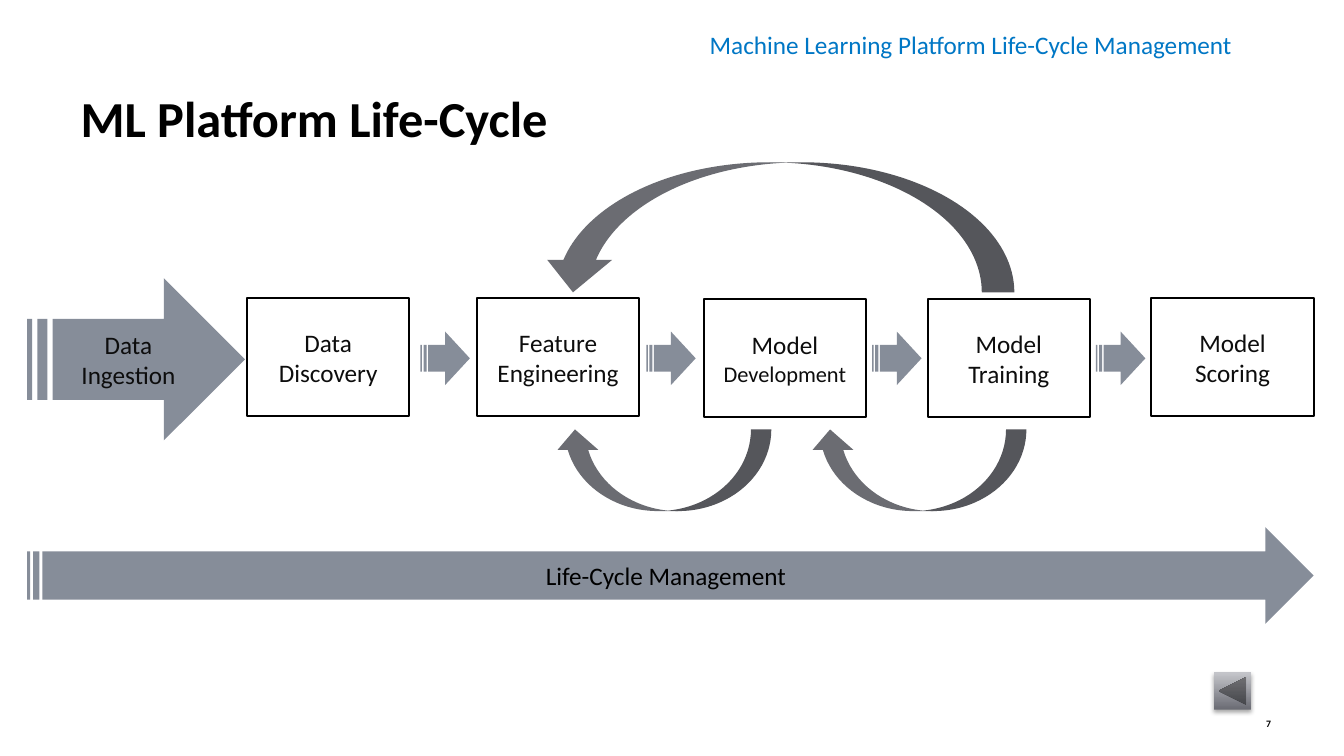
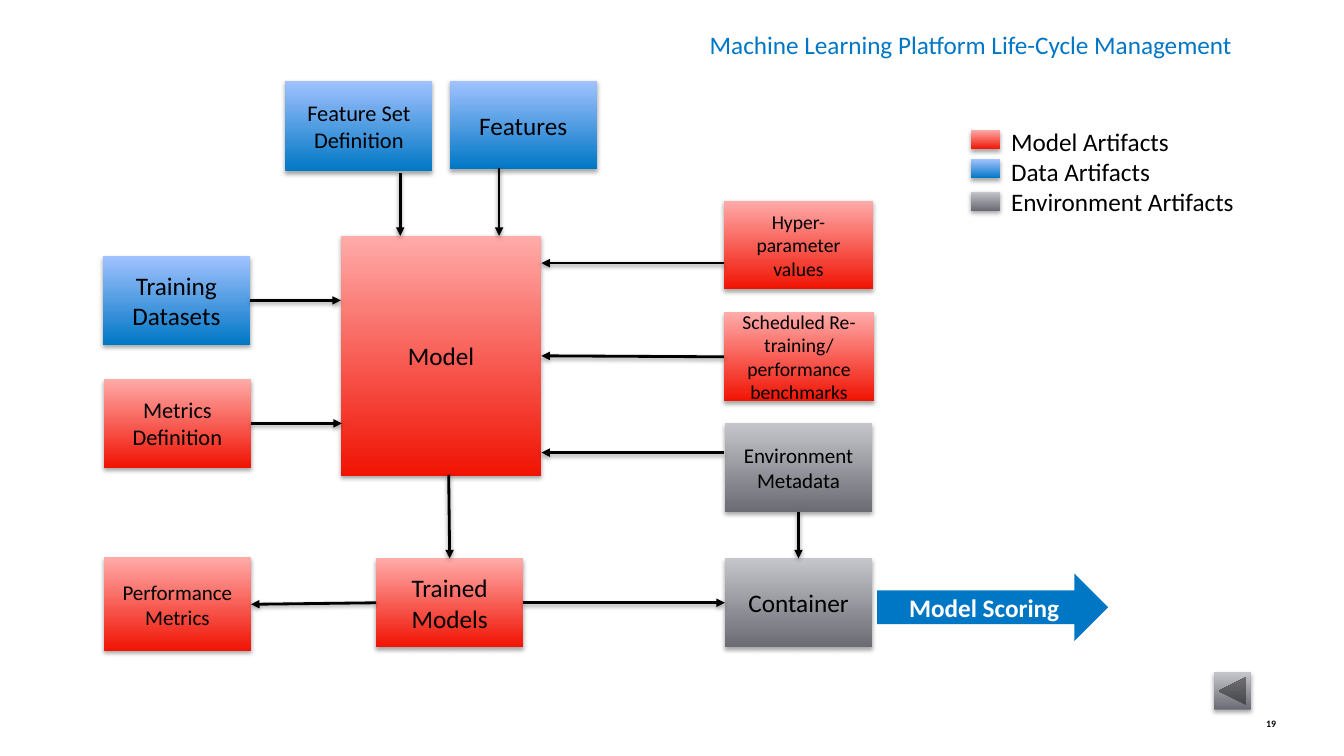
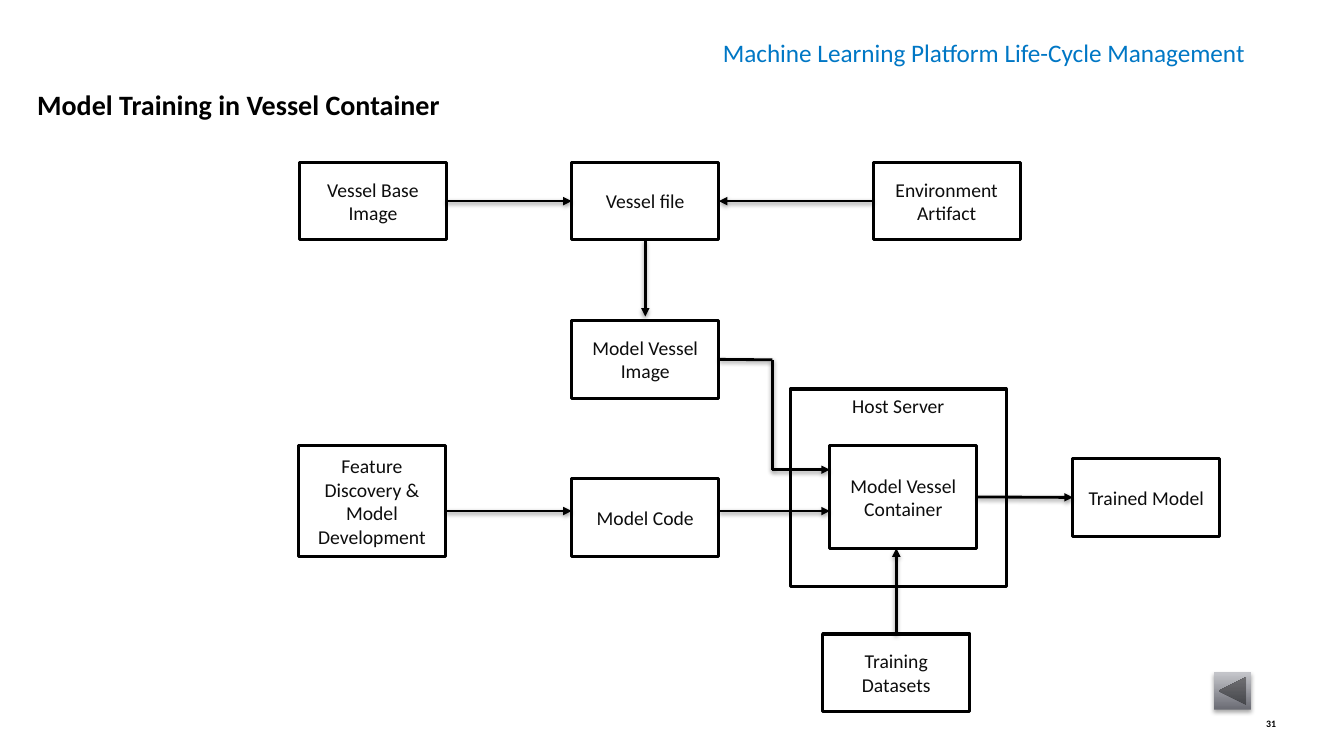
from dataclasses import dataclass
from typing import Union

import lxml.etree
import pptx
import pptx.dml.color
import pptx.enum.shapes
import pptx.enum.text
import pptx.oxml
import pptx.oxml.ns
import pptx.util

Inches = pptx.util.Inches
Pt = pptx.util.Pt
Kind = pptx.enum.shapes.MSO_SHAPE
Align = pptx.enum.text.PP_ALIGN
Anchor = pptx.enum.text.MSO_ANCHOR
Shape = pptx.shapes.autoshape.Shape
Slide = pptx.slide.Slide
Fill = Union[str, tuple[str, str], None]
Runs = list[tuple[str, float]]
Point = tuple[float, float]
Joint = tuple[str, int]

FONT = "Calibri"
BLACK, INK, WHITE = "000000", "0D0D0D", "FFFFFF"
BRAND, STEEL, SLATE = "0077C5", "868D99", "6B6C72"
RED, BLUE, GREY = ("F01303", "FFABA9"), (BRAND, "A2C2FF"), ("6A6B73", "C5C6CB")
TOP, LEFT, BOTTOM, RIGHT = range(4)


@dataclass
class Box:
    x: float
    y: float
    w: float
    h: float
    text: Union[str, Runs] = ""
    size: float = 18
    fill: Fill = None
    kind: int = Kind.RECTANGLE
    ink: str = BLACK
    edge: float = 0
    turn: float = 0
    bold: bool = False
    anchor: int = Anchor.MIDDLE


@dataclass
class Link:
    start: Union[Point, Joint]
    end: Union[Point, Joint]
    head: bool = True


def tint(code: str) -> pptx.dml.color.RGBColor:
    return pptx.dml.color.RGBColor.from_string(code)


def cast(part: lxml.etree._Element, alpha: int, drop: int) -> None:
    space = pptx.oxml.ns.nsdecls("a")
    part.append(pptx.oxml.parse_xml(
        f'<a:outerShdw {space} blurRad="40000" dist="{drop}" dir="5400000" rotWithShape="0">'
        f'<a:srgbClr val="{BLACK}"><a:alpha val="{alpha}000"/></a:srgbClr></a:outerShdw>'))


def paint(shape: Shape, fill: Fill) -> None:
    shape.shadow.inherit = False
    if fill is None:
        shape.fill.background()
    elif isinstance(fill, str):
        shape.fill.solid()
        shape.fill.fore_color.rgb = tint(fill)
    else:
        shape.fill.gradient()
        shape.fill.gradient_angle = 90
        for stop, code in zip(shape.fill.gradient_stops, fill):
            stop.color.rgb = tint(code)
        cast(shape._element.spPr.find(pptx.oxml.ns.qn("a:effectLst")), 35, 23000)


def add_run(para, text: str, size: float, ink: str, bold: bool) -> None:
    run = para.add_run()
    run.text = text
    run.font.name = FONT
    run.font.size = Pt(size)
    run.font.bold = bold
    run.font.color.rgb = tint(ink)


def draw(slide: Slide, box: Box) -> Shape:
    shape = slide.shapes.add_shape(
        box.kind, Inches(box.x), Inches(box.y), Inches(box.w), Inches(box.h))
    shape.rotation = box.turn
    paint(shape, box.fill)
    if box.edge:
        shape.line.color.rgb = tint(BLACK)
        shape.line.width = Pt(box.edge)
    else:
        shape.line.fill.background()
    if box.text:
        frame = shape.text_frame
        frame.word_wrap = True
        frame.vertical_anchor = box.anchor
        para = frame.paragraphs[0]
        para.alignment = Align.CENTER
        runs = [(box.text, box.size)] if isinstance(box.text, str) else box.text
        for text, size in runs:
            add_run(para, text, size, box.ink, box.bold)
    return shape


def write(slide: Slide, x: float, y: float, w: float, h: float, lines: list[str], size: float,
          ink: str = BLACK, bold: bool = False, wrap: bool = True,
          anchor: int = Anchor.TOP) -> None:
    frame = slide.shapes.add_textbox(Inches(x), Inches(y), Inches(w), Inches(h)).text_frame
    frame.word_wrap = wrap
    frame.vertical_anchor = anchor
    if not wrap:
        frame.auto_size = pptx.enum.text.MSO_AUTO_SIZE.SHAPE_TO_FIT_TEXT
    for i, text in enumerate(lines):
        para = frame.add_paragraph() if i else frame.paragraphs[0]
        add_run(para, text, size, ink, bold)


def locate(end: Union[Point, Joint], nodes: dict[str, Shape]) -> tuple[int, int]:
    if not isinstance(end[0], str):
        return Inches(end[0]), Inches(end[1])
    node = nodes[end[0]]
    mid_x, mid_y = node.left + node.width // 2, node.top + node.height // 2
    return [(mid_x, node.top), (node.left, mid_y),
            (mid_x, node.top + node.height), (node.left + node.width, mid_y)][end[1]]


def join(slide: Slide, link: Link, nodes: dict[str, Shape]) -> None:
    line = slide.shapes.add_connector(
        pptx.enum.shapes.MSO_CONNECTOR.STRAIGHT,
        *locate(link.start, nodes), *locate(link.end, nodes))
    if isinstance(link.start[0], str):
        line.begin_connect(nodes[link.start[0]], link.start[1])
    if isinstance(link.end[0], str):
        line.end_connect(nodes[link.end[0]], link.end[1])
    line.line.color.rgb = tint(BLACK)
    line.line.width = Pt(2)
    qn = pptx.oxml.ns.qn
    if link.head:
        lxml.etree.SubElement(line.line._get_or_add_ln(), qn("a:tailEnd"), type="triangle")
    cast(lxml.etree.SubElement(line._element.spPr, qn("a:effectLst")), 38, 20000)


def chart_out(slide: Slide, boxes: dict[str, Box], links: list[Link]) -> None:
    nodes = {name: draw(slide, box) for name, box in boxes.items()}
    for link in links:
        join(slide, link, nodes)


def start(deck, number: int, x: float = 6.94, y: float = 0.24) -> Slide:
    slide = deck.slides.add_slide(deck.slide_layouts[6])
    write(slide, 12.46, 7.08, 0.39, 0.2, [str(number)], 7, bold=True, anchor=Anchor.MIDDLE)
    write(slide, x, y, 6.09, 0.4, ["Machine Learning Platform Life-Cycle Management"], 18,
          BRAND, wrap=False)
    draw(slide, Box(12.04, 6.67, 0.37, 0.37, fill=GREY,
                    kind=Kind.ACTION_BUTTON_BACK_OR_PREVIOUS))
    return slide


def cycle(deck) -> None:
    slide = start(deck, 7)
    write(slide, 0.7, 0.82, 12.15, 1.53, ["ML Platform Life-Cycle"], 36, bold=True)
    steps = [
        (2.45, 2.96, "Data Discovery"),
        (4.73, 2.96, "Feature Engineering"),
        (6.98, 2.97, [("Model ", 18), ("Development", 16)]),
        (9.2, 2.97, "Model Training"),
        (11.42, 2.96, "Model Scoring"),
    ]
    for x, y, text in steps:
        draw(slide, Box(x, y, 1.61, 1.17, text, ink=INK, edge=1.5))
    stripe = Kind.STRIPED_RIGHT_ARROW
    draw(slide, Box(0.27, 2.76, 2.16, 1.61, "Data Ingestion", fill=STEEL, kind=stripe, ink=INK))
    for x in (4.17, 6.41, 8.65, 10.87):
        draw(slide, Box(x, 3.29, 0.49, 0.53, fill=STEEL, kind=stripe))
    for x in (5.5, 8.03):
        draw(slide, Box(x, 4.26, 2.15, 0.81, fill=SLATE, kind=Kind.CURVED_DOWN_ARROW, turn=180))
    draw(slide, Box(5.36, 1.61, 4.7, 1.29, fill=SLATE, kind=Kind.CURVED_UP_ARROW, turn=180))
    draw(slide, Box(0.27, 5.23, 12.76, 0.96, "Life-Cycle Management", fill=STEEL, kind=stripe))


def model(deck) -> None:
    slide = start(deck, 19)
    wide, high = 1.46, 0.88
    boxes = {
        "meta": Box(7.19, 4.2, wide, high, "Environment Metadata", 15, GREY),
        "crate": Box(7.19, 5.54, wide, high, "Container", 18, GREY),
        "trained": Box(3.73, 5.54, wide, high, "Trained Models", 18, RED),
        "model": Box(3.38, 2.34, 1.99, 2.38, "Model", 18, RED),
        "traits": Box(4.46, 0.8, wide, high, "Features", 18, BLUE),
        "bench": Box(7.18, 3.1, 1.49, high,
                     "Scheduled Re-training/ performance benchmarks", 14, RED),
        "hyper": Box(7.18, 1.99, 1.48, high, "Hyper-parameter values", 14, RED),
        "metrics": Box(1.03, 3.76, wide, high, "Metrics Definition", 16, RED),
        "scores": Box(1.03, 5.53, wide, 0.93, "Performance Metrics", 15, RED),
        "set": Box(2.83, 0.8, wide, 0.9, "Feature Set Definition", 16, BLUE),
        "data": Box(1.02, 2.54, wide, high, "Training Datasets", 18, BLUE),
    }
    links = [
        Link((4.95, 1.67), (4.95, 2.34)),
        Link((3.97, 1.72), (3.97, 2.34)),
        Link(("trained", RIGHT), ("crate", LEFT)),
        Link(("meta", BOTTOM), ("crate", TOP)),
        Link((7.18, 4.49), (5.37, 4.49)),
        Link(("data", RIGHT), (3.38, 2.98)),
        Link(("metrics", RIGHT), (3.39, 4.2)),
        Link((4.45, 4.71), ("trained", TOP)),
        Link(("trained", LEFT), ("scores", RIGHT)),
        Link(("bench", LEFT), ("model", RIGHT)),
        Link((7.18, 2.61), (5.37, 2.61)),
    ]
    chart_out(slide, boxes, links)
    write(slide, 9.93, 1.2, 2.67, 1.01,
          ["Model Artifacts", "Data Artifacts", "Environment Artifacts"], 18, wrap=False)
    for y, fill in ((1.29, RED), (1.58, BLUE), (1.9, GREY)):
        draw(slide, Box(9.63, y, 0.29, 0.19, fill=fill))
    draw(slide, Box(8.7, 5.69, 2.29, 0.67, "Model Scoring", fill=BRAND,
                    kind=Kind.RIGHT_ARROW, ink=WHITE, bold=True))


def train(deck) -> None:
    slide = start(deck, 31, 7.07, 0.32)
    write(slide, 0.27, 0.82, 12.48, 1.53, ["Model Training in Vessel Container"], 20, bold=True)

    def node(x: float, y: float, text: str, w: float = 1.46, h: float = 0.77,
             anchor: int = Anchor.MIDDLE) -> Box:
        return Box(x, y, w, h, text, 14, ink=INK, edge=2.25, anchor=anchor)

    boxes = {
        "host": node(7.84, 3.86, "Host Server", 2.14, 1.96, Anchor.TOP),
        "env": node(8.66, 1.61, "Environment Artifact"),
        "base": node(2.97, 1.61, "Vessel Base Image"),
        "file": node(5.67, 1.61, "Vessel file"),
        "image": node(5.67, 3.18, "Model Vessel Image"),
        "study": node(2.96, 4.42, "Feature Discovery & Model Development", h=1.1),
        "code": node(5.67, 4.75, "Model Code"),
        "trained": node(10.64, 4.55, "Trained Model"),
        "data": node(8.16, 6.29, "Training Datasets"),
        "crate": node(8.23, 4.42, "Model Vessel Container", h=1.02),
    }
    links = [
        Link(("file", BOTTOM), (6.4, 3.14)),
        Link(("base", RIGHT), ("file", LEFT)),
        Link(("env", LEFT), ("file", RIGHT)),
        Link((4.43, 5.07), (5.67, 5.07)),
        Link((7.13, 5.07), (8.23, 5.07)),
        Link(("crate", RIGHT), ("trained", LEFT)),
        Link(("data", TOP), (8.89, 5.44)),
        Link(("image", RIGHT), (7.66, 3.57), False),
        Link((7.66, 3.57), (7.66, 4.66), False),
        Link((7.66, 4.66), (8.23, 4.66)),
    ]
    chart_out(slide, boxes, links)


def main() -> None:
    deck = pptx.Presentation()
    deck.slide_width, deck.slide_height = Inches(13.33), Inches(7.5)
    for build in (cycle, model, train):
        build(deck)
    deck.save("out.pptx")


if __name__ == "__main__":
    main()
